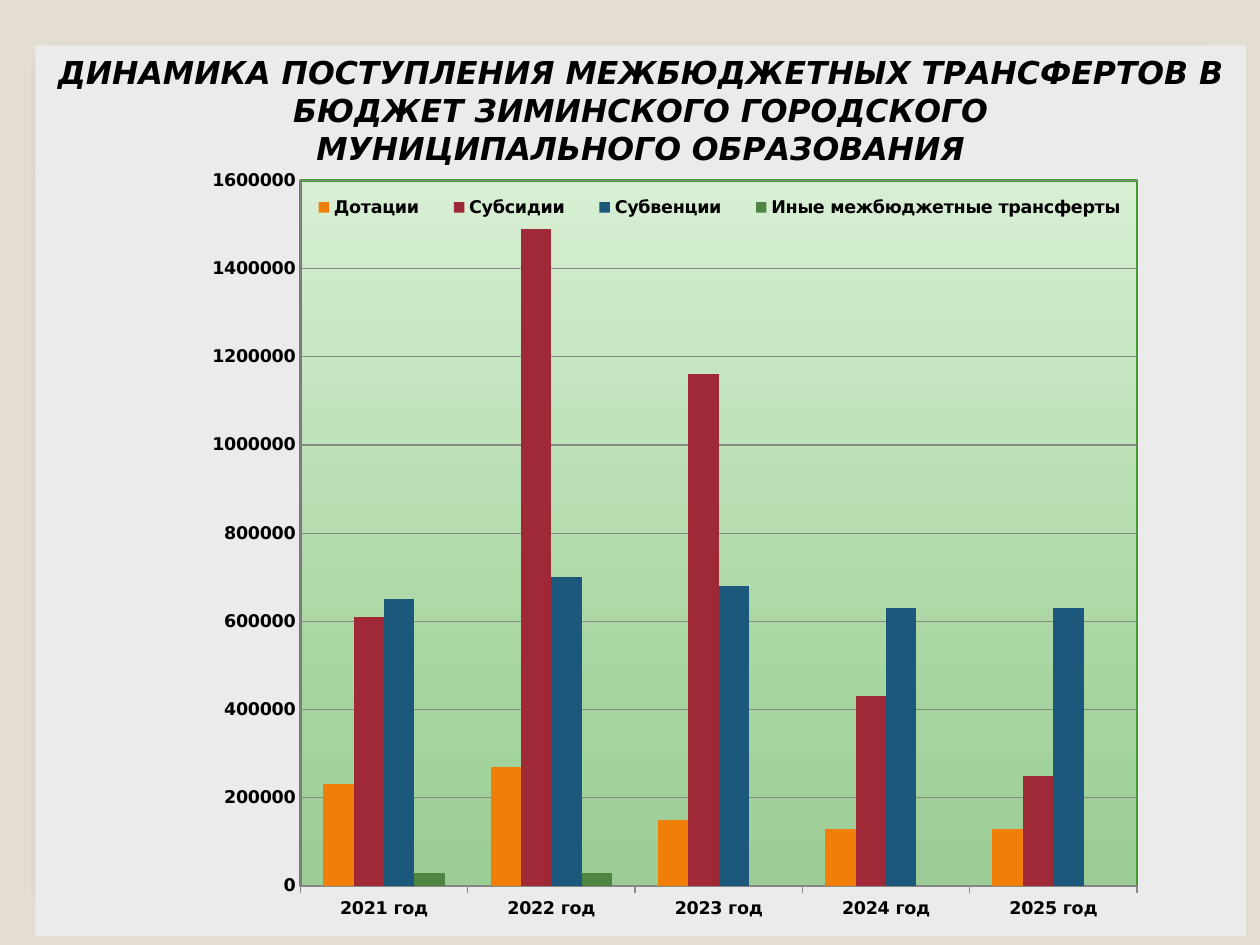
"""Build a slide with a clustered column chart of budget transfers by year."""
from dataclasses import dataclass
from typing import Optional

from lxml.etree import _Element
from pptx import Presentation
from pptx.chart.chart import Chart
from pptx.chart.data import CategoryChartData
from pptx.dml.color import RGBColor
from pptx.enum.chart import XL_CHART_TYPE, XL_LEGEND_POSITION, XL_TICK_MARK
from pptx.enum.shapes import MSO_SHAPE
from pptx.enum.text import MSO_ANCHOR, PP_ALIGN
from pptx.oxml import parse_xml
from pptx.oxml.ns import nsdecls, qn
from pptx.slide import Slide
from pptx.util import Inches, Pt


@dataclass(frozen=True)
class Theme:
    font: str = "DejaVu Sans"
    title_size: float = 18
    chart_size: float = 10
    text: str = "000000"
    background: str = "E3DED1"
    panel: str = "EBEBEB"
    card_line: str = "A4A4A4"
    grid: str = "878787"
    plot_line: str = "459A2E"
    card_stops: tuple = ((0, "FFFFFF"), (98, "FFFFFF"), (99, "F7F7F7"), (100, "DADADA"))
    plot_stops: tuple = ((0, "9DCD96"), (25, "A5D49E"), (100, "D7EED3"))


@dataclass(frozen=True)
class Box:
    left: float
    top: float
    width: float
    height: float

    def emu(self) -> tuple:
        return tuple(Inches(v) for v in (self.left, self.top, self.width, self.height))


@dataclass(frozen=True)
class Transfer:
    name: str
    values: tuple[Optional[int], ...]
    color: str


THEME = Theme()
CARD = Box(0.33, 0.36, 9.33, 6.78)
TITLE = Box(0.28, 0.36, 9.61, 1.02)
CHART = Box(0.28, 1.31, 9.61, 6.12)
PLOT = Box(0.219, 0.02, 0.691, 0.915)
LEGEND = Box(0.21, 0.03, 0.71, 0.05)
TITLE_LINES = (
    "ДИНАМИКА ПОСТУПЛЕНИЯ МЕЖБЮДЖЕТНЫХ ТРАНСФЕРТОВ В БЮДЖЕТ ЗИМИНСКОГО ГОРОДСКОГО",
    "МУНИЦИПАЛЬНОГО ОБРАЗОВАНИЯ",
)
YEARS = [f"{year} год" for year in range(2021, 2026)]
TRANSFERS = (
    Transfer("Дотации", (230000, 270000, 150000, 130000, 130000), "F07F09"),
    Transfer("Субсидии", (610000, 1490000, 1160000, 430000, 250000), "9F2936"),
    Transfer("Субвенции", (650000, 700000, 680000, 630000, 630000), "1B587C"),
    Transfer("Иные межбюджетные трансферты", (30000, 30000, None, None, None), "4E8542"),
)


def rgb(color: str) -> RGBColor:
    return RGBColor.from_string(color)


def solid_xml(color: str) -> str:
    return f'<a:solidFill><a:srgbClr val="{color}"/></a:solidFill>'


def gradient_xml(stops: tuple, angle: int, ns: str = "") -> str:
    gs = "".join(f'<a:gs pos="{pos * 1000}"><a:srgbClr val="{color}"/></a:gs>' for pos, color in stops)
    return f'<a:gradFill {ns}><a:gsLst>{gs}</a:gsLst><a:lin ang="{angle * 60000}" scaled="0"/></a:gradFill>'


def chart_sppr(fill: str, line: str) -> _Element:
    return parse_xml(f'<c:spPr {nsdecls("c", "a")}>{fill}<a:ln w="19050">{line}</a:ln></c:spPr>')


def layout(box: Box, target: str = "") -> _Element:
    sizes = (("x", box.left), ("y", box.top), ("w", box.width), ("h", box.height))
    modes = '<c:xMode val="edge"/><c:yMode val="edge"/>'
    values = "".join(f'<c:{key} val="{value}"/>' for key, value in sizes)
    return parse_xml(
        f'<c:layout {nsdecls("c")}><c:manualLayout>{target}{modes}{values}</c:manualLayout></c:layout>'
    )


def add_card(s: Slide) -> None:
    sp = s.shapes.add_shape(MSO_SHAPE.ROUNDED_RECTANGLE, *CARD.emu())
    sp.adjustments[0] = 0.021
    sp.shadow.inherit = False
    sp.line.color.rgb = rgb(THEME.card_line)
    sp.line.width = Pt(0.16)
    sppr = sp._element.spPr
    sppr.find(qn("a:prstGeom")).addnext(parse_xml(gradient_xml(THEME.card_stops, 90, nsdecls("a"))))
    sppr.find(qn("a:effectLst")).append(parse_xml(
        f'<a:outerShdw {nsdecls("a")} blurRad="{Pt(6)}" dist="{Pt(4)}" dir="5400000">'
        '<a:srgbClr val="000000"><a:alpha val="25000"/></a:srgbClr></a:outerShdw>'
    ))


def add_title(s: Slide) -> None:
    sp = s.shapes.add_shape(MSO_SHAPE.RECTANGLE, *TITLE.emu())
    sp.shadow.inherit = False
    sp.fill.solid()
    sp.fill.fore_color.rgb = rgb(THEME.panel)
    sp.line.fill.background()
    tf = sp.text_frame
    tf.word_wrap = True
    tf.vertical_anchor = MSO_ANCHOR.MIDDLE
    p = tf.paragraphs[0]
    p.alignment = PP_ALIGN.CENTER
    for i, line in enumerate(TITLE_LINES):
        if i:
            p.add_line_break()
        r = p.add_run()
        r.text = line
        r.font.name = THEME.font
        r.font.size = Pt(THEME.title_size)
        r.font.bold = r.font.italic = True
        r.font.color.rgb = rgb(THEME.text)


def style_axes(chart: Chart) -> None:
    cat, val = chart.category_axis, chart.value_axis
    cat.major_tick_mark = XL_TICK_MARK.OUTSIDE
    val.major_tick_mark = XL_TICK_MARK.NONE
    val.minimum_scale, val.maximum_scale, val.major_unit = 0, 1600000, 200000
    val.has_major_gridlines = True
    val.tick_labels.number_format = "0"
    val.tick_labels.number_format_is_linked = False
    for item in (cat, val, val.major_gridlines):
        item.format.line.color.rgb = rgb(THEME.grid)
        item.format.line.width = Pt(0.75)


def style_areas(chart: Chart) -> None:
    space = chart._chartSpace
    space.find(qn("c:chart")).addnext(chart_sppr(solid_xml(THEME.panel), "<a:noFill/>"))
    area = space.find(".//" + qn("c:plotArea"))
    for old in area.findall(qn("c:layout")):
        area.remove(old)
    area.insert(0, layout(PLOT, '<c:layoutTarget val="inner"/>'))
    area.append(chart_sppr(gradient_xml(THEME.plot_stops, 270), solid_xml(THEME.plot_line)))


def add_legend(chart: Chart) -> None:
    chart.has_legend = True
    legend = chart.legend
    legend.position = XL_LEGEND_POSITION.TOP
    legend.include_in_layout = True
    el = legend._element
    for old in el.findall(qn("c:layout")):
        el.remove(old)
    el.find(qn("c:legendPos")).addnext(layout(LEGEND))


def add_transfer_chart(s: Slide) -> None:
    data = CategoryChartData()
    data.categories = YEARS
    for transfer in TRANSFERS:
        data.add_series(transfer.name, transfer.values)
    chart = s.shapes.add_chart(XL_CHART_TYPE.COLUMN_CLUSTERED, *CHART.emu(), data).chart
    chart.has_title = False
    chart.font.name = THEME.font
    chart.font.size = Pt(THEME.chart_size)
    chart.font.bold = True
    chart.font.color.rgb = rgb(THEME.text)
    plot = chart.plots[0]
    plot.gap_width, plot.overlap, plot.vary_by_categories = 150, 0, False
    for series, transfer in zip(plot.series, TRANSFERS):
        series.format.fill.solid()
        series.format.fill.fore_color.rgb = rgb(transfer.color)
    style_axes(chart)
    style_areas(chart)
    add_legend(chart)


def main() -> None:
    prs = Presentation()
    prs.slide_width, prs.slide_height = Inches(10), Inches(7.5)
    s = prs.slides.add_slide(prs.slide_layouts[6])
    s.background.fill.solid()
    s.background.fill.fore_color.rgb = rgb(THEME.background)
    add_card(s)
    add_title(s)
    add_transfer_chart(s)
    prs.save("out.pptx")


if __name__ == "__main__":
    main()
